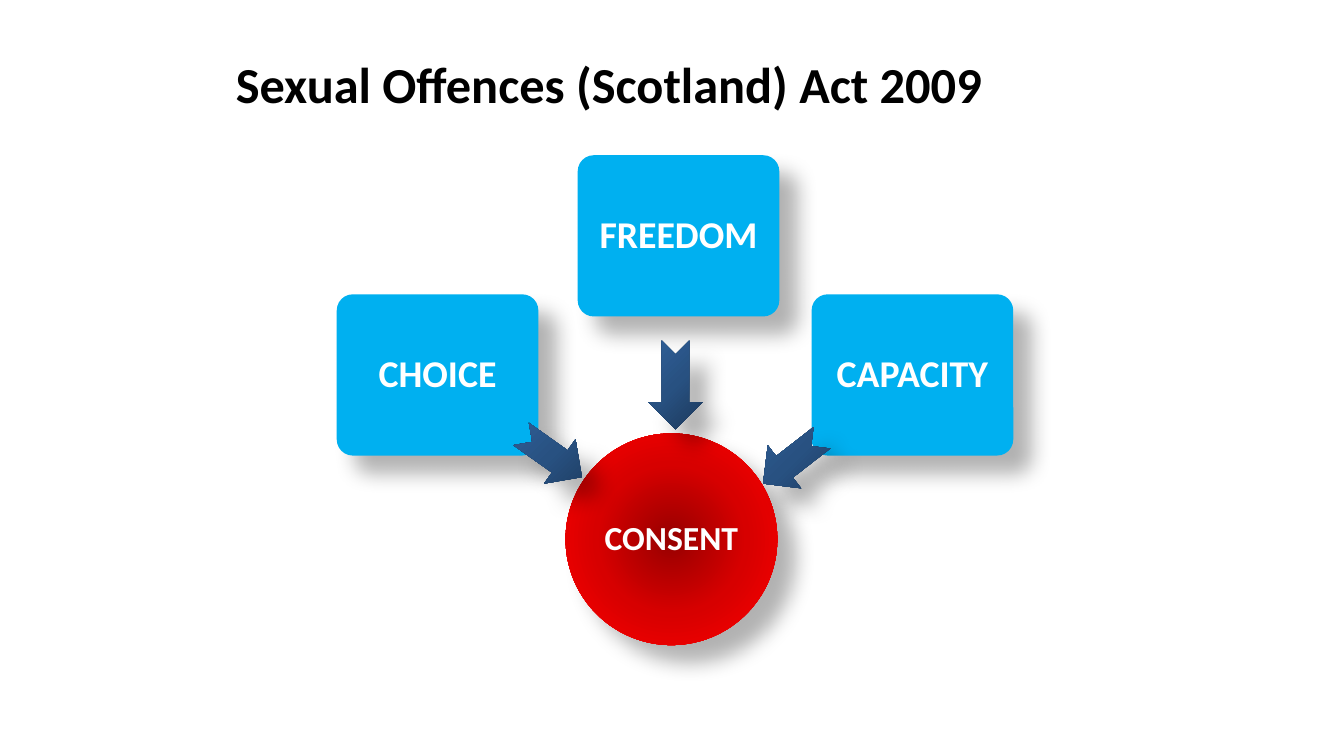
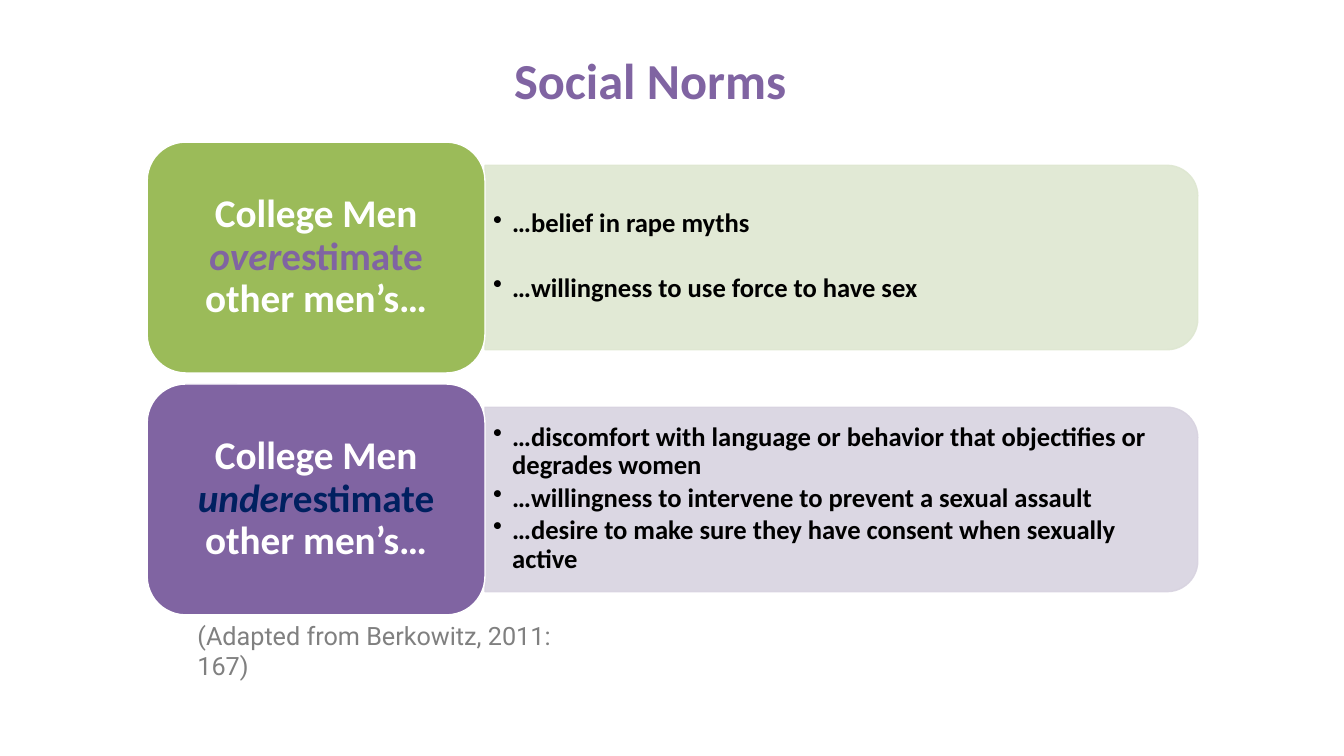
from dataclasses import dataclass

from lxml.etree import SubElement as sub
from pptx import Presentation
from pptx.dml.color import RGBColor
from pptx.enum.shapes import MSO_SHAPE as SHAPE
from pptx.enum.text import MSO_ANCHOR as ANCHOR, PP_ALIGN as ALIGN
from pptx.oxml import parse_xml
from pptx.oxml.ns import nsdecls, qn
from pptx.shapes.autoshape import Shape
from pptx.slide import Slide
from pptx.text.text import TextFrame
from pptx.util import Inches, Pt

BLACK, WHITE, GREY = "000000", "FFFFFF", "808080"
BLUE, GREEN, PURPLE, NAVY = "00B0F0", "9BBB59", "8064A2", "002060"
RED_STOPS = ("970000", "D70000", "FF0000")
ARROW_STOPS = ("1C395B", "285181", "306099")
RADIAL = ('<a:path path="circle"><a:fillToRect l="50000" t="50000" '
          'r="50000" b="50000"/></a:path>')
LINEAR = '<a:lin ang="13500000" scaled="0"/>'


@dataclass
class Run:
    text: str
    color: str = ""
    italic: bool = False


@dataclass
class Card:
    text: str
    left: float
    top: float


@dataclass
class Arrow:
    left: float
    top: float
    width: float
    turn: float


@dataclass
class Norm:
    color: str
    tint: str
    label: list[Run]
    points: list[str]
    gap: float


def rgb(code: str) -> RGBColor:
    return RGBColor.from_string(code)


def write(frame: TextFrame, paras: list, *, size: float, color: str = WHITE,
          font: str = "Calibri", bold: bool = True, align: ALIGN = ALIGN.LEFT,
          anchor: ANCHOR = ANCHOR.TOP, pad: tuple = (0.1, 0.05),
          lines: float = 1, gap: float = 0, bullet: bool = False) -> None:
    """Fill a frame; each paragraph is a string or a list of runs."""
    frame.word_wrap = True
    frame.vertical_anchor = anchor
    frame.margin_left = frame.margin_right = Inches(pad[0])
    frame.margin_top = frame.margin_bottom = Inches(pad[1])
    for i, item in enumerate(paras):
        para = frame.add_paragraph() if i else frame.paragraphs[0]
        para.alignment = align
        para.line_spacing = lines
        if i:
            para.space_before = Pt(gap)
        if bullet:
            props = para._p.get_or_add_pPr()
            props.set("marL", str(Inches(0.19)))
            props.set("indent", str(-Inches(0.19)))
            sub(props, qn("a:buChar"), char="•")
        for part in [Run(item)] if isinstance(item, str) else item:
            run = para.add_run()
            run.text = part.text
            run.font.name, run.font.size = font, Pt(size)
            run.font.bold, run.font.italic = bold, part.italic
            run.font.color.rgb = rgb(part.color or color)


def text_box(slide: Slide, left: float, top: float, width: float,
             height: float, paras: list, **fmt) -> None:
    box = slide.shapes.add_textbox(*map(Inches, (left, top, width, height)))
    write(box.text_frame, paras, **fmt)


def title(slide: Slide, text: str, left: float, top: float, width: float,
          color: str) -> None:
    text_box(slide, left, top, width, 0.71, [text], size=36, color=color)


def draw(slide: Slide, kind: SHAPE, left: float, top: float, width: float,
         height: float, fill: str = "", line: str = "") -> Shape:
    shape = slide.shapes.add_shape(
        kind, *map(Inches, (left, top, width, height)))
    shape.shadow.inherit = False
    if fill:
        shape.fill.solid()
        shape.fill.fore_color.rgb = rgb(fill)
    else:
        shape.fill.background()
    if line:
        shape.line.color.rgb = rgb(line)
        shape.line.width = Pt(1)
    else:
        shape.line.fill.background()
    return shape


def shade(shape: Shape, stops: tuple, course: str) -> None:
    """Give an unfilled shape a gradient of evenly spaced stops."""
    step = 100000 // (len(stops) - 1)
    marks = "".join(f'<a:gs pos="{i * step}"><a:srgbClr val="{code}"/></a:gs>'
                    for i, code in enumerate(stops))
    props = shape._element.spPr
    props.replace(props.find(qn("a:noFill")), parse_xml(
        f'<a:gradFill {nsdecls("a")} rotWithShape="0">'
        f'<a:gsLst>{marks}</a:gsLst>{course}</a:gradFill>'))


def cast(shape: Shape) -> None:
    """Add a soft shadow to the lower right."""
    effects = shape._element.spPr.find(qn("a:effectLst"))
    outer = sub(effects, qn("a:outerShdw"), blurRad=str(Pt(15)),
                dist=str(Pt(18)), dir="2700000", rotWithShape="0")
    tone = sub(outer, qn("a:srgbClr"), val=BLACK)
    sub(tone, qn("a:alpha"), val="30000")


def band(slide: Slide, left: float, top: float, width: float, height: float,
         tint: str) -> None:
    """Draw a slightly clear band with rounded right corners."""
    shift = (width - height) / 2
    shape = draw(slide, SHAPE.ROUND_2_SAME_RECTANGLE, left + shift,
                 top - shift, height, width, tint, tint)
    shape.rotation = 90
    for tone in shape._element.spPr.iter(qn("a:srgbClr")):
        sub(tone, qn("a:alpha"), val="90000")


def consent(slide: Slide) -> None:
    label = dict(align=ALIGN.CENTER, anchor=ANCHOR.MIDDLE, lines=0.9)
    disc = draw(slide, SHAPE.OVAL, 5.61, 4.3, 2.1, 2.1)
    shade(disc, RED_STOPS, RADIAL)
    cast(disc)
    write(disc.text_frame, ["CONSENT"], size=24, pad=(0, 0), **label)

    for card in (Card("CHOICE", 3.34, 2.92), Card("FREEDOM", 5.73, 1.54),
                 Card("CAPACITY", 8.05, 2.92)):
        tile = draw(slide, SHAPE.ROUNDED_RECTANGLE, card.left, card.top,
                    2, 1.6, BLUE)
        tile.adjustments[0] = 0.1
        cast(tile)
        write(tile.text_frame, [card.text], size=27, pad=(0.05, 0.05), **label)

    title(slide, "Sexual Offences (Scotland) Act 2009", 2.24, 0.48, 7.97, BLACK)

    for arrow in (Arrow(5.1, 4.25, 0.74, 35.3), Arrow(6.26, 3.55, 0.88, 90),
                  Arrow(7.49, 4.3, 0.74, 142.1)):
        shape = draw(slide, SHAPE.NOTCHED_RIGHT_ARROW, arrow.left, arrow.top,
                     arrow.width, 0.54)
        shape.rotation = arrow.turn
        shade(shape, ARROW_STOPS, LINEAR)
        cast(shape)


def norms(slide: Slide) -> None:
    title(slide, "Social Norms", 5, 0.44, 3.03, PURPLE)
    rows = (
        Norm(GREEN, "DEE7D1",
             [Run("College Men "), Run("over", PURPLE, True),
              Run("estimate", PURPLE), Run(" other men’s…")],
             ["…belief in rape myths",
              "…willingness to use force to have sex"], 25.5),
        Norm(PURPLE, "D8D3E0",
             [Run("College Men "), Run("under", NAVY, True),
              Run("estimate ", NAVY), Run("other men’s…")],
             ["…discomfort with language or behavior that objectifies or "
              "degrades women",
              "…willingness to intervene to prevent a sexual assault",
              "…desire to make sure they have consent when sexually active"],
             2.5),
    )
    for i, row in enumerate(rows):
        top = 1.41 + 2.4 * i
        band(slide, 4.81, top + 0.23, 7.07, 1.83, row.tint)
        text_box(slide, 4.81, top + 0.31, 6.98, 1.65, row.points, size=19,
                 color=BLACK, anchor=ANCHOR.MIDDLE, pad=(0.08, 0.04),
                 lines=0.9, gap=row.gap, bullet=True)
        tile = draw(slide, SHAPE.ROUNDED_RECTANGLE, 1.46, top, 3.35, 2.29,
                    row.color, WHITE)
        write(tile.text_frame, [row.label], size=28, align=ALIGN.CENTER,
              anchor=ANCHOR.MIDDLE, pad=(0.12, 0.06), lines=0.9)
    text_box(slide, 1.86, 6.1, 4.13, 0.4,
             ["(Adapted from Berkowitz, 2011: 167)"], size=18, color=GREY,
             font="Roboto", bold=False)


def main() -> None:
    deck = Presentation()
    deck.slide_width, deck.slide_height = Inches(13.33), Inches(7.5)
    for build in (consent, norms):
        build(deck.slides.add_slide(deck.slide_layouts[6]))
    deck.save("out.pptx")


if __name__ == "__main__":
    main()
